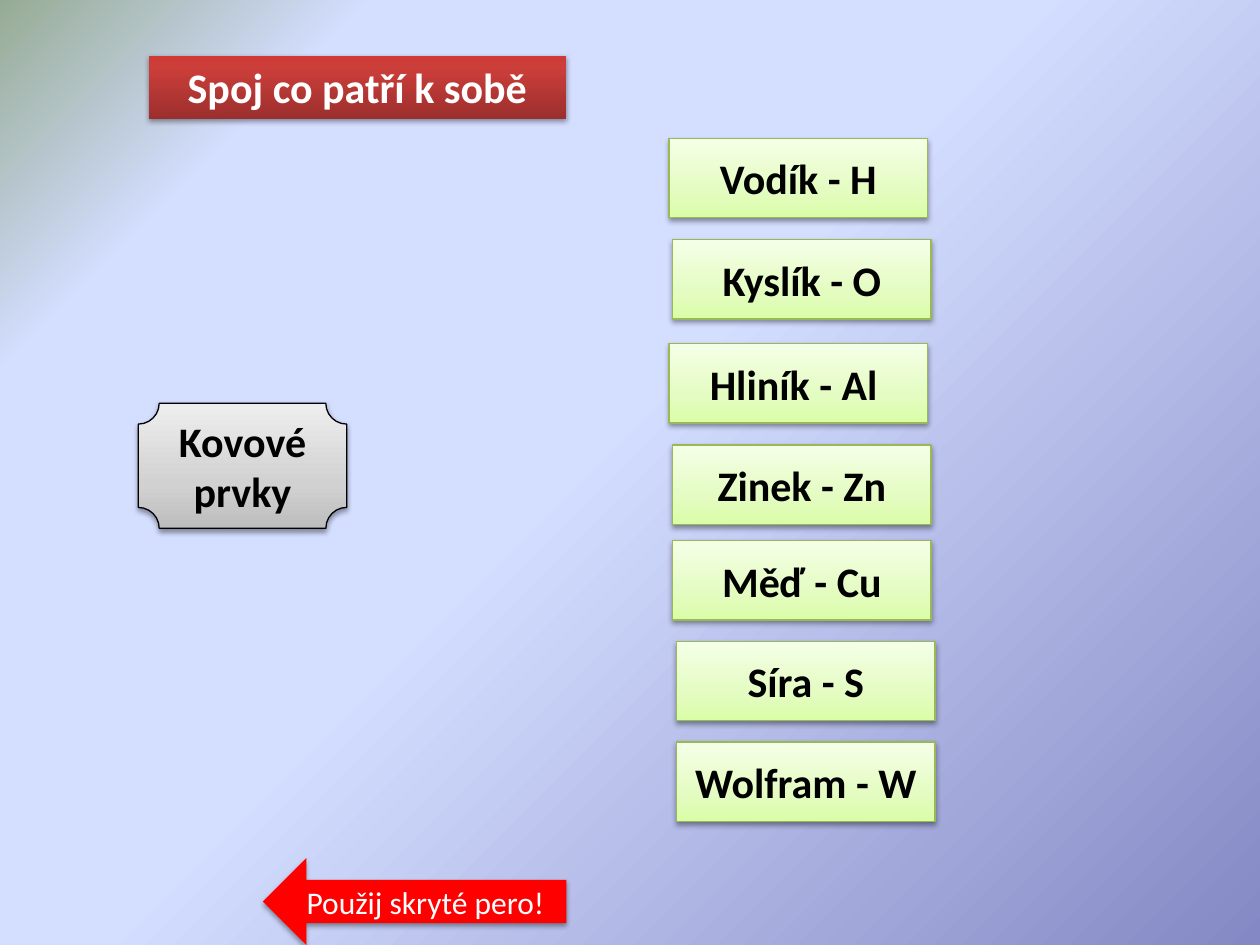
from lxml.etree import SubElement
from pptx import Presentation
from pptx.dml.color import RGBColor
from pptx.enum.shapes import MSO_SHAPE
from pptx.enum.text import MSO_ANCHOR, PP_ALIGN
from pptx.oxml.ns import qn
from pptx.util import Cm, Pt

BLACK = RGBColor(0x00, 0x00, 0x00)
WHITE = RGBColor(0xFF, 0xFF, 0xFF)
RED = RGBColor(0xFF, 0x00, 0x00)
GREEN_EDGE = RGBColor(0x98, 0xB9, 0x55)
GREENS = [(0, RGBColor(0xDA, 0xFD, 0xA7)), (35, RGBColor(0xE4, 0xFC, 0xC2)),
          (100, RGBColor(0xF5, 0xFF, 0xE7))]
REDS = [(0, RGBColor(0x9C, 0x2F, 0x2D)), (80, RGBColor(0xCB, 0x3E, 0x3A)),
        (100, RGBColor(0xCE, 0x3B, 0x37))]
GREYS = [(0, RGBColor(0xBD, 0xBD, 0xBD)), (35, RGBColor(0xD1, 0xD1, 0xD1)),
         (100, RGBColor(0xEE, 0xEE, 0xEE))]
SKY = [(0, RGBColor(0x84, 0x88, 0xC4)), (53, RGBColor(0xD4, 0xDE, 0xFF)),
       (83, RGBColor(0xD4, 0xDE, 0xFF)), (100, RGBColor(0x96, 0xAB, 0x94))]


def apply_gradient(owner, fill, stops):
    """Fill with a bottom-to-top gradient and return its XML element."""
    fill.gradient()
    fill.gradient_angle = 90
    gradient = owner.element.xpath(".//a:gradFill")[0]
    stop_list = gradient.find(qn("a:gsLst"))
    for old_stop in list(stop_list):
        stop_list.remove(old_stop)
    for percent, color in stops:
        stop = SubElement(stop_list, qn("a:gs"), pos=str(percent * 1000))
        SubElement(stop, qn("a:srgbClr"), val=str(color))
    return gradient


def write_text(shape, text, size=24, color=BLACK, bold=True, anchor=MSO_ANCHOR.MIDDLE):
    frame = shape.text_frame
    frame.word_wrap = True
    frame.vertical_anchor = anchor
    paragraph = frame.paragraphs[0]
    paragraph.alignment = PP_ALIGN.CENTER
    run = paragraph.add_run()
    run.text = text
    run.font.name = "Calibri"
    run.font.size = Pt(size)
    run.font.bold = bold
    run.font.color.rgb = color


prs = Presentation()
prs.slide_width, prs.slide_height = Cm(25.4), Cm(19.05)
slide = prs.slides.add_slide(prs.slide_layouts[5])

# Background: circular gradient centred on the bottom right corner
sky = apply_gradient(slide, slide.background.fill, SKY)
sky.remove(sky.find(qn("a:lin")))
circle = SubElement(sky, qn("a:path"))
circle.set("path", "circle")
SubElement(circle, qn("a:fillToRect"), l="100000", t="100000")
SubElement(sky, qn("a:tileRect"), r="-100000", b="-100000")

# Heading
heading = slide.shapes.title
heading.left, heading.top, heading.width, heading.height = Cm(3), Cm(1.12), Cm(8.41), Cm(1.27)
apply_gradient(heading, heading.fill, REDS)
heading.line.fill.background()
write_text(heading, "Spoj co patří k sobě", color=WHITE, anchor=MSO_ANCHOR.TOP)

# Elements to match
elements = [
    ("Vodík - H", 13.49, 2.79),
    ("Kyslík - O", 13.56, 4.83),
    ("Hliník - Al ", 13.49, 6.93),
    ("Zinek - Zn", 13.56, 8.97),
    ("Měď - Cu", 13.56, 10.9),
    ("Síra - S", 13.64, 12.93),
    ("Wolfram - W", 13.64, 14.96),
]
for name, left, top in elements:
    element_card = slide.shapes.add_shape(MSO_SHAPE.RECTANGLE, Cm(left), Cm(top), Cm(5.21), Cm(1.6))
    apply_gradient(element_card, element_card.fill, GREENS)
    element_card.line.color.rgb = GREEN_EDGE
    element_card.line.width = Pt(0.75)
    write_text(element_card, name)

# Category
metals = slide.shapes.add_shape(MSO_SHAPE.PLAQUE, Cm(2.79), Cm(8.13), Cm(4.2), Cm(2.52))
apply_gradient(metals, metals.fill, GREYS)
metals.line.color.rgb = BLACK
metals.line.width = Pt(0.75)
write_text(metals, "Kovové prvky")

# Hint
hint = slide.shapes.add_shape(MSO_SHAPE.LEFT_ARROW, Cm(5.3), Cm(17.3), Cm(6.12), Cm(1.75))
hint.fill.solid()
hint.fill.fore_color.rgb = RED
hint.line.fill.background()
write_text(hint, "Použij skryté pero!", size=18, color=WHITE, bold=False)

# Soft shadow below every shape
for shape in slide.shapes:
    shape.shadow.inherit = False
    effects = shape.element.spPr.find(qn("a:effectLst"))
    shadow = SubElement(effects, qn("a:outerShdw"), blurRad=str(Pt(3.1)), dist=str(Pt(1.6)),
                        dir="5400000", rotWithShape="0")
    shade = SubElement(shadow, qn("a:srgbClr"), val=str(BLACK))
    SubElement(shade, qn("a:alpha"), val="38000")

prs.save("out.pptx")
